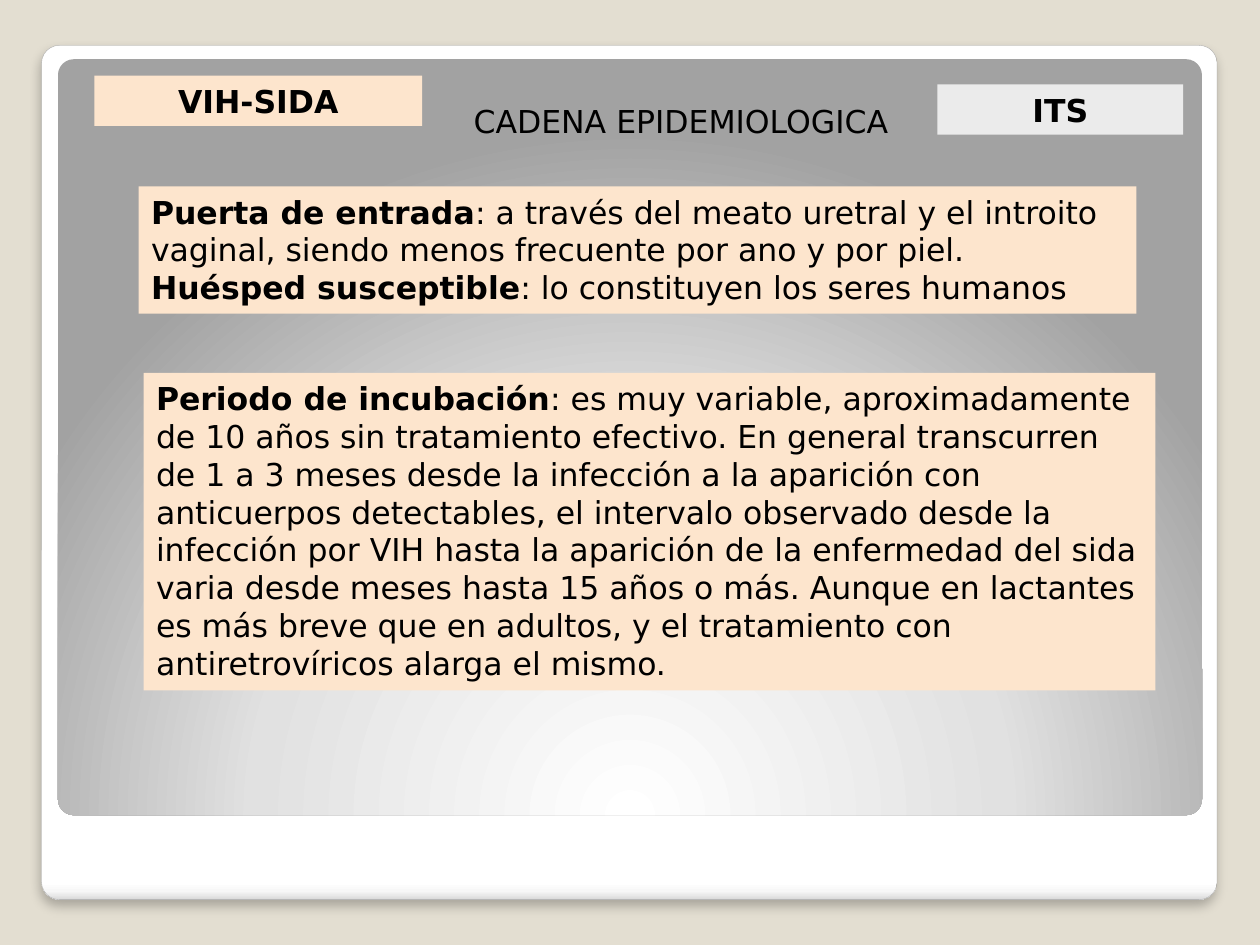
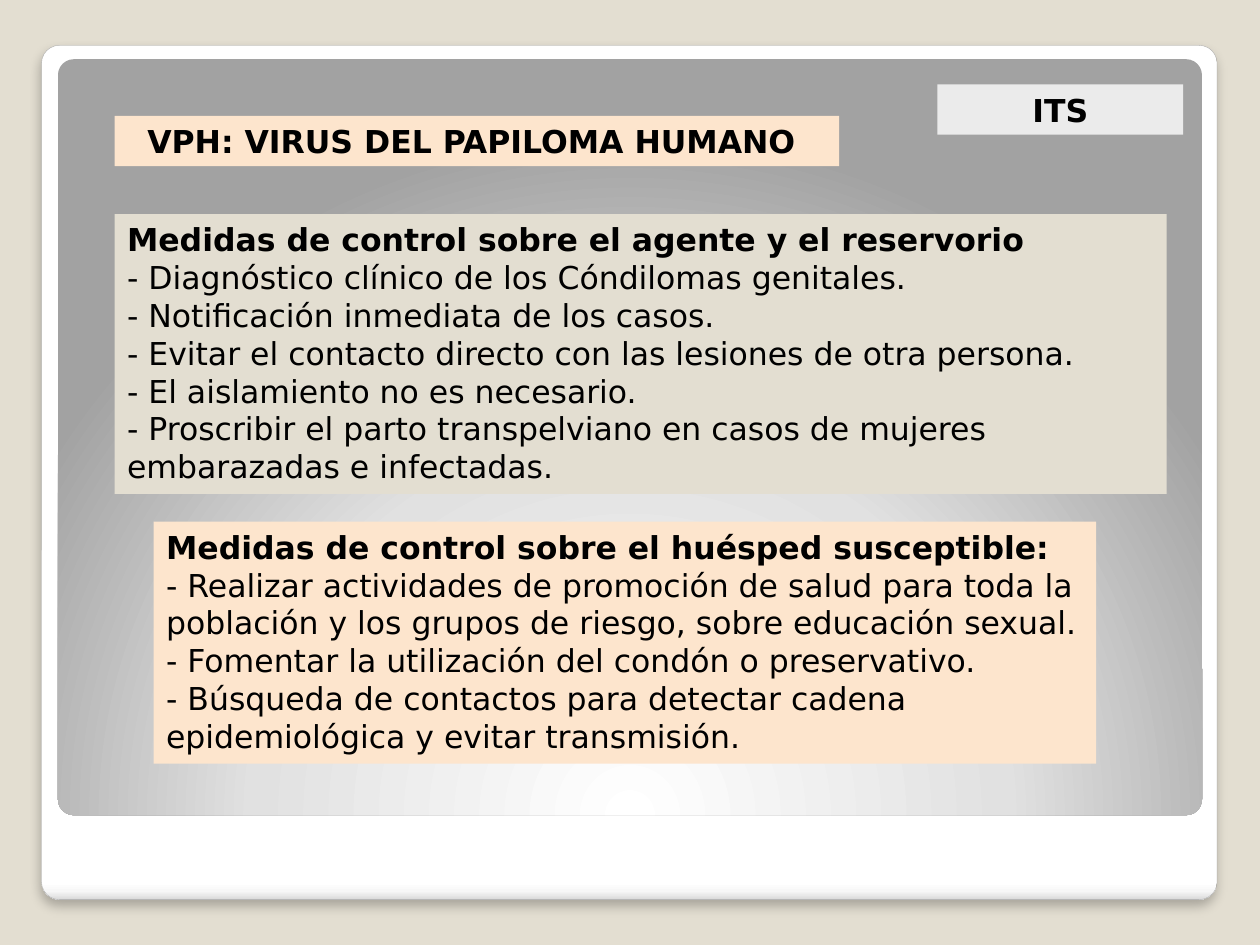
import pptx
import pptx.util
import pptx.dml.color
import pptx.enum.shapes
import pptx.enum.text
import lxml.etree

Inches = pptx.util.Inches
NS = "http://schemas.openxmlformats.org/drawingml/2006/main"
FONT = "DejaVu Sans"
SIZE = 18
BACK, INK, PEACH, PALE, EDGE = "E3DED1", "000000", "FDE5CD", "EBEBEB", "A4A4A4"

CARD = (0.33, 0.36, 9.33, 6.78)
PANEL = (0.46, 0.47, 9.08, 6)
ROUND = 0.021
GLOSS = [(0, "FFFFFF"), (98, "FFFFFF"), (99, "F7F7F7"), (100, "DADADA")]
GLOW = [(0, "FFFFFF"), (55, "E1E1E1"), (100, "A2A2A2")]
DOWN = '<a:lin ang="5400000" scaled="0"/>'
RADIAL = ('<a:path path="circle"><a:fillToRect l="50000" t="175000" '
          'r="50000" b="-75000"/></a:path>')
SHADE = (f'<a:effectLst xmlns:a="{NS}"><a:outerShdw blurRad="76200" dist="50800" '
         'dir="5400000" algn="tl" rotWithShape="0"><a:srgbClr val="000000">'
         '<a:alpha val="25000"/></a:srgbClr></a:outerShdw></a:effectLst>')

TOPIC = ((7.44, 0.67, 1.95, 0.4), PALE, True, [("ITS", "")])

SLIDES = [
    [
        ((1.1, 1.48, 7.92, 1.01), PEACH, False, [
            ("Puerta de entrada", ": a través del meato uretral y el introito vaginal, "
             "siendo menos frecuente por ano y por piel."),
            ("Huésped susceptible", ": lo constituyen los seres humanos"),
        ]),
        TOPIC,
        ((0.75, 0.6, 2.6, 0.4), PEACH, True, [("VIH-SIDA", "")]),
        ((3.66, 0.76, 3.62, 0.4), None, False, [("", "CADENA EPIDEMIOLOGICA")]),
        ((1.14, 2.96, 8.03, 2.52), PEACH, False, [
            ("Periodo de incubación", ": es muy variable, aproximadamente de 10 años sin "
             "tratamiento efectivo. En general transcurren de 1 a 3 meses desde la "
             "infección a la aparición con anticuerpos detectables, el intervalo observado "
             "desde la infección por VIH hasta la aparición de la enfermedad del sida varia "
             "desde meses hasta 15 años o más. Aunque en lactantes es más breve que en "
             "adultos, y el tratamiento con antiretrovíricos alarga el mismo."),
        ]),
    ],
    [
        ((0.91, 1.7, 8.35, 2.22), BACK, False, [
            ("Medidas de control sobre el agente y el reservorio", ""),
            ("", "- Diagnóstico clínico de los Cóndilomas genitales."),
            ("", "- Notificación inmediata de los casos."),
            ("", "- Evitar el contacto directo con las lesiones de otra persona."),
            ("", "- El aislamiento no es necesario."),
            ("", "- Proscribir el parto transpelviano en casos de mujeres embarazadas "
             "e infectadas."),
        ]),
        TOPIC,
        ((0.91, 0.92, 5.75, 0.4), PEACH, True, [("VPH: VIRUS DEL PAPILOMA HUMANO ", "")]),
        ((1.22, 4.14, 7.48, 1.92), PEACH, False, [
            ("Medidas de control sobre el huésped susceptible:", ""),
            ("", "- Realizar actividades de promoción de salud para toda la población "
             "y los grupos de riesgo, sobre educación sexual."),
            ("", "- Fomentar la utilización del condón o preservativo."),
            ("", "- Búsqueda de contactos para detectar cadena epidemiológica y evitar "
             "transmisión."),
        ]),
    ],
]


def paint(part, color):
    part.solid()
    part.fore_color.rgb = pptx.dml.color.RGBColor.from_string(color)


def add_plate(slide, place, stops, course):
    kind = pptx.enum.shapes.MSO_SHAPE.ROUNDED_RECTANGLE
    plate = slide.shapes.add_shape(kind, *map(Inches, place))
    plate.adjustments[0] = ROUND
    plate.shadow.inherit = False
    plate.line.fill.background()
    marks = "".join(f'<a:gs pos="{pos * 1000}"><a:srgbClr val="{color}"/></a:gs>'
                    for pos, color in stops)
    fill = lxml.etree.fromstring(f'<a:gradFill xmlns:a="{NS}" rotWithShape="1">'
                                 f'<a:gsLst>{marks}</a:gsLst>{course}</a:gradFill>')
    plate.element.spPr.find(f"{{{NS}}}prstGeom").addnext(fill)
    return plate


def add_frame(slide):
    paint(slide.background.fill, BACK)
    card = add_plate(slide, CARD, GLOSS, DOWN)
    paint(card.line.fill, EDGE)
    card.line.width = pptx.util.Pt(0.16)
    props = card.element.spPr
    props.replace(props.find(f"{{{NS}}}effectLst"), lxml.etree.fromstring(SHADE))
    add_plate(slide, PANEL, GLOW, RADIAL)


def add_box(slide, place, color, center, lines):
    box = slide.shapes.add_textbox(*map(Inches, place))
    if color:
        paint(box.fill, color)
    frame = box.text_frame
    frame.word_wrap = True
    frame.auto_size = pptx.enum.text.MSO_AUTO_SIZE.SHAPE_TO_FIT_TEXT
    for index, (strong, plain) in enumerate(lines):
        para = frame.add_paragraph() if index else frame.paragraphs[0]
        if center:
            para.alignment = pptx.enum.text.PP_ALIGN.CENTER
        for text, bold in ((strong, True), (plain, False)):
            if text:
                run = para.add_run()
                run.text = text
                run.font.name = FONT
                run.font.size = pptx.util.Pt(SIZE)
                run.font.bold = bold
                paint(run.font.fill, INK)


def main():
    deck = pptx.Presentation()
    deck.slide_width, deck.slide_height = Inches(10), Inches(7.5)
    for boxes in SLIDES:
        slide = deck.slides.add_slide(deck.slide_layouts[6])
        add_frame(slide)
        for box in boxes:
            add_box(slide, *box)
    deck.save("out.pptx")


if __name__ == "__main__":
    main()
